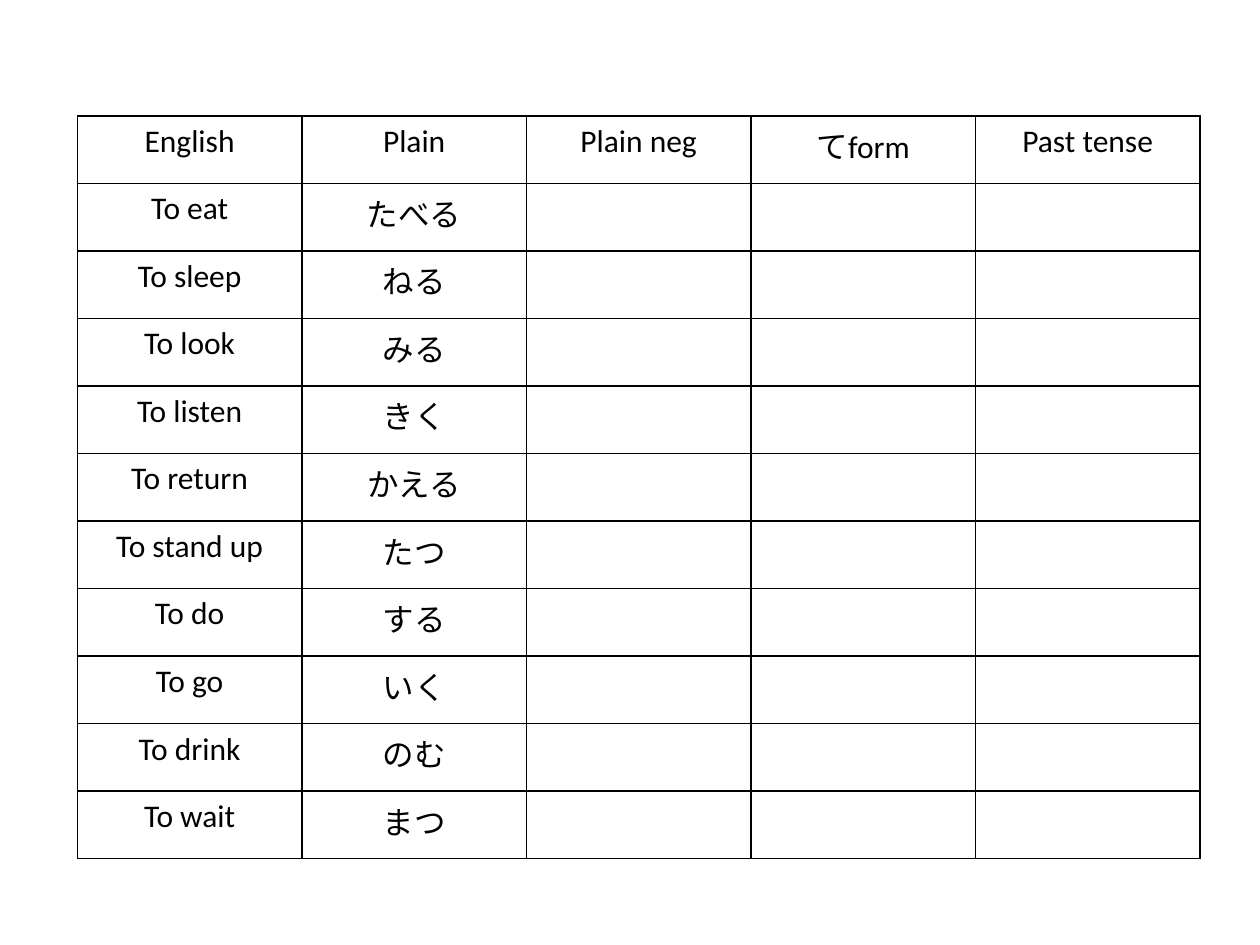
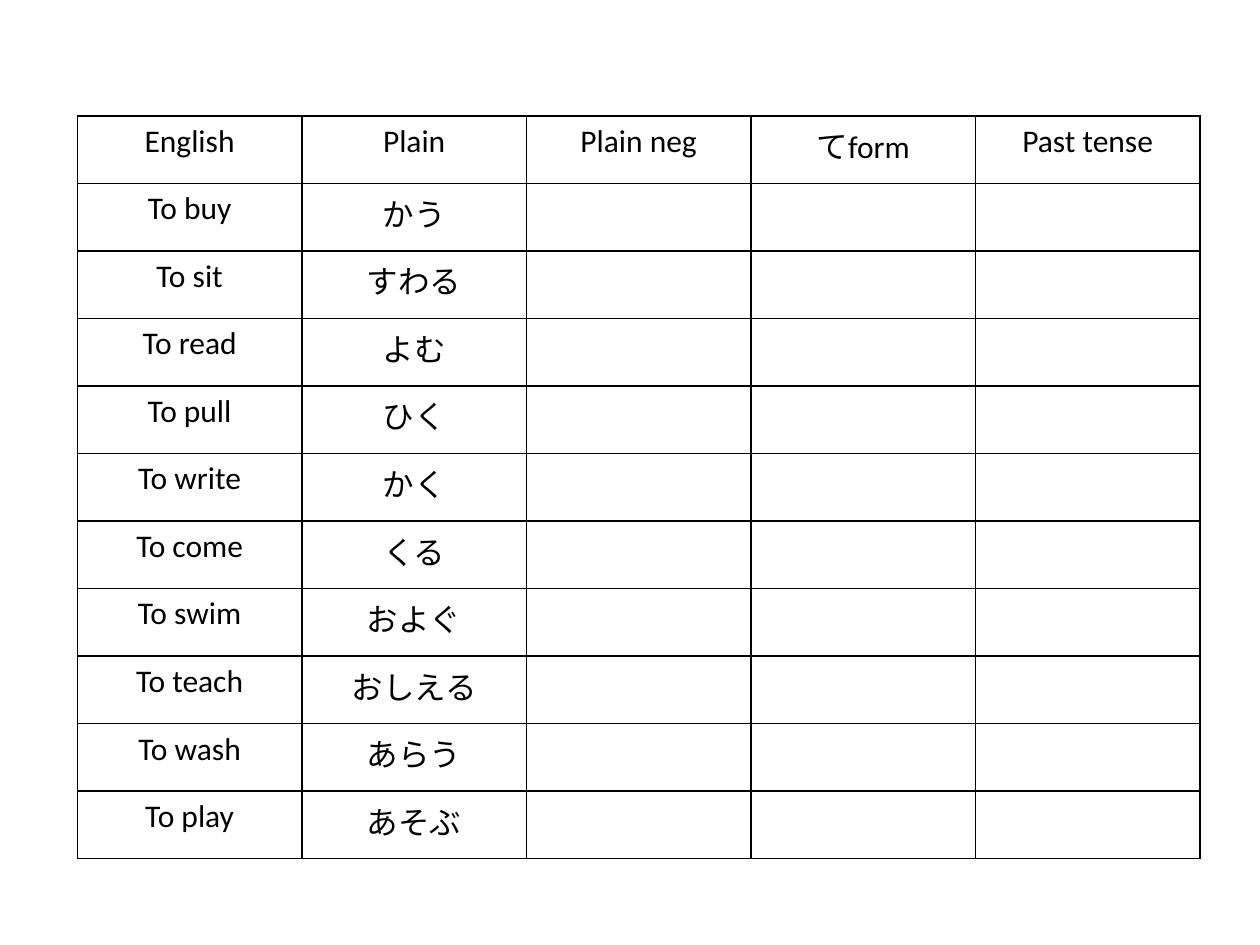
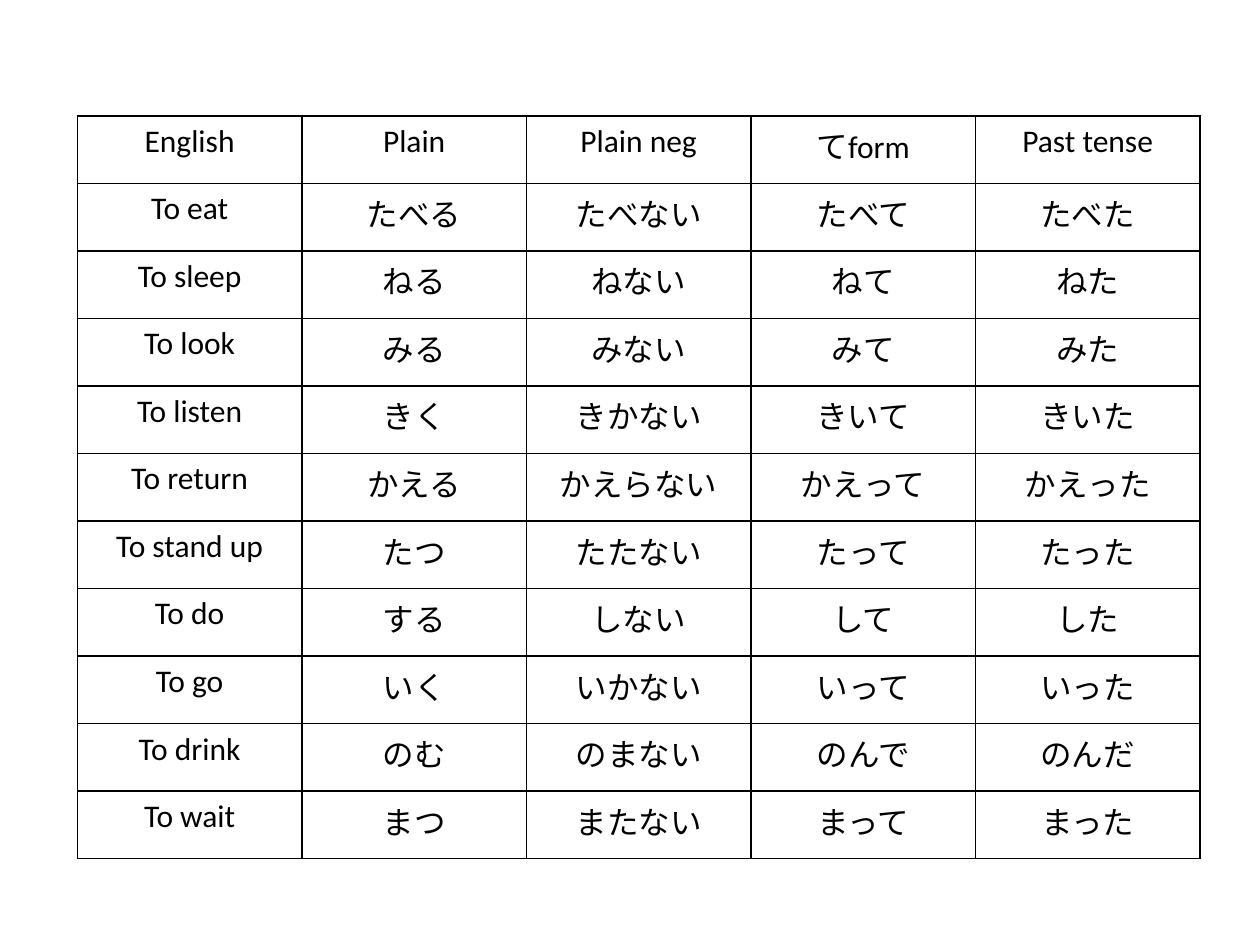
from typing import NamedTuple

from lxml import etree
from pptx import Presentation
from pptx.dml.color import RGBColor
from pptx.enum.text import PP_ALIGN
from pptx.oxml.ns import qn
from pptx.util import Cm, Pt

# Shared style
CENTER = PP_ALIGN.CENTER
BLACK = RGBColor(0x00, 0x00, 0x00)
FONT_NAME = "Calibri"
FONT_SIZE = Pt(18)
BORDER_WIDTH = Pt(1)
BORDER_SIDES = ("a:lnL", "a:lnR", "a:lnT", "a:lnB")

# Shared layout
SLIDE_WIDTH, SLIDE_HEIGHT = Cm(25.4), Cm(19.05)
TABLE_LEFT, TABLE_TOP = Cm(1.56), Cm(2.34)
TABLE_WIDTH, TABLE_HEIGHT = Cm(22.63), Cm(14.98)
BLANK_LAYOUT = 6


class Verb(NamedTuple):
    """One table row; forms left empty are for the student to fill in."""
    english: str
    plain: str
    negative: str = ""
    te_form: str = ""
    past: str = ""


HEADER = Verb("English", "Plain", "Plain neg", "てform", "Past tense")

FIRST_ANSWERS = [
    Verb("To eat", "たべる", "たべない", "たべて", "たべた"),
    Verb("To sleep", "ねる", "ねない", "ねて", "ねた"),
    Verb("To look", "みる", "みない", "みて", "みた"),
    Verb("To listen", "きく", "きかない", "きいて", "きいた"),
    Verb("To return", "かえる", "かえらない", "かえって", "かえった"),
    Verb("To stand up", "たつ", "たたない", "たって", "たった"),
    Verb("To do", "する", "しない", "して", "した"),
    Verb("To go", "いく", "いかない", "いって", "いった"),
    Verb("To drink", "のむ", "のまない", "のんで", "のんだ"),
    Verb("To wait", "まつ", "またない", "まって", "まった"),
]

FIRST_EXERCISE = [Verb(verb.english, verb.plain) for verb in FIRST_ANSWERS]

SECOND_EXERCISE = [
    Verb("To buy", "かう"),
    Verb("To sit", "すわる"),
    Verb("To read", "よむ"),
    Verb("To pull", "ひく"),
    Verb("To write", "かく"),
    Verb("To come", "くる"),
    Verb("To swim", "およぐ"),
    Verb("To teach", "おしえる"),
    Verb("To wash", "あらう"),
    Verb("To play", "あそぶ"),
]


def add_borders(cell) -> None:
    """Draw a solid line on all four sides of a cell."""
    properties = cell._tc.get_or_add_tcPr()
    for side in BORDER_SIDES:
        line = etree.SubElement(properties, qn(side), w=str(BORDER_WIDTH))
        fill = etree.SubElement(line, qn("a:solidFill"))
        etree.SubElement(fill, qn("a:srgbClr"), val=str(BLACK))


def format_cell(cell, text: str) -> None:
    """Give a cell its borders, clear fill and centred text."""
    add_borders(cell)
    cell.fill.background()
    cell.text_frame.text = text
    paragraph = cell.text_frame.paragraphs[0]
    paragraph.alignment = CENTER
    paragraph.font.size = FONT_SIZE
    for run in paragraph.runs:
        run.font.name = FONT_NAME
        run.font.size = FONT_SIZE
        run.font.color.rgb = BLACK


def add_verb_slide(presentation, verbs: list[Verb]) -> None:
    """Add a slide with a conjugation table."""
    slide = presentation.slides.add_slide(presentation.slide_layouts[BLANK_LAYOUT])
    rows = [HEADER, *verbs]
    table = slide.shapes.add_table(
        len(rows), len(HEADER), TABLE_LEFT, TABLE_TOP, TABLE_WIDTH, TABLE_HEIGHT
    ).table
    table.first_row = False
    table.horz_banding = False
    for row_index, verb in enumerate(rows):
        for column_index, text in enumerate(verb):
            format_cell(table.cell(row_index, column_index), text)


def main() -> None:
    presentation = Presentation()
    presentation.slide_width = SLIDE_WIDTH
    presentation.slide_height = SLIDE_HEIGHT
    for verbs in (FIRST_EXERCISE, SECOND_EXERCISE, FIRST_ANSWERS):
        add_verb_slide(presentation, verbs)
    presentation.save("out.pptx")


if __name__ == "__main__":
    main()
